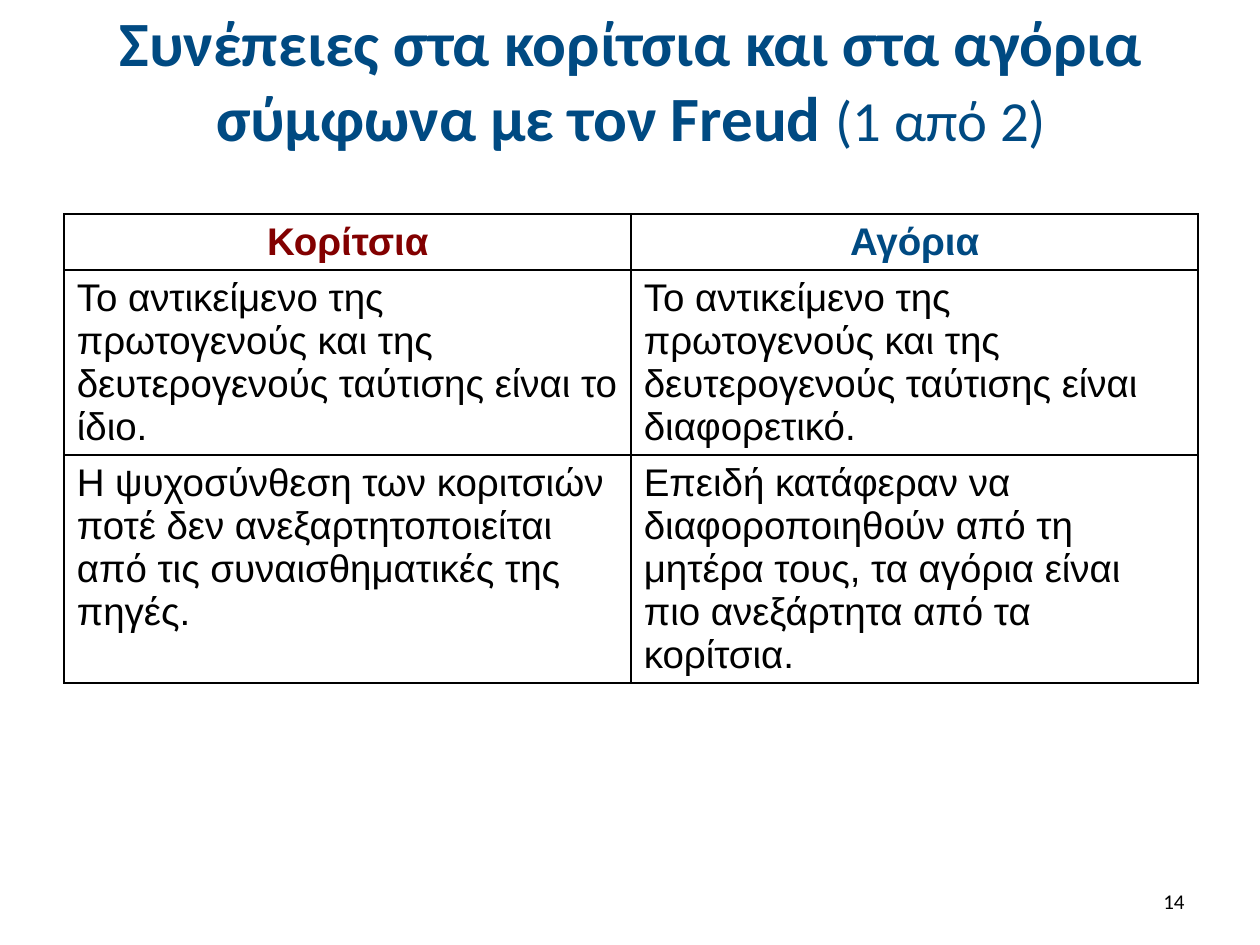
"""Build a slide with a table comparing consequences for girls and boys."""
from dataclasses import dataclass

from lxml import etree
from pptx import Presentation
from pptx import util as u
from pptx.dml.color import RGBColor
from pptx.enum import text
from pptx.oxml import ns

NAVY, MAROON, BLACK = "004A82", "820000", "000000"


@dataclass
class Cell:
    """Wording and look of one table cell."""
    wording: str
    color: str = BLACK
    header: bool = False


@dataclass
class Row:
    """Height in inches and cells of one table row."""
    height: float
    cells: tuple[Cell, Cell]


ROWS = [
    Row(0.44, (Cell("Κορίτσια", MAROON, True), Cell("Αγόρια", NAVY, True))),
    Row(1.47, (
        Cell("Το αντικείμενο της πρωτογενούς και της δευτερογενούς ταύτισης είναι το ίδιο."),
        Cell("Το αντικείμενο της πρωτογενούς και της δευτερογενούς ταύτισης είναι διαφορετικό."),
    )),
    Row(1.81, (
        Cell("Η ψυχοσύνθεση των κοριτσιών ποτέ δεν ανεξαρτητοποιείται από τις "
             "συναισθηματικές της πηγές."),
        Cell("Επειδή κατάφεραν να διαφοροποιηθούν από τη μητέρα τους, τα αγόρια είναι "
             "πιο ανεξάρτητα από τα κορίτσια."),
    )),
]


def style_font(font, name: str, size: float, color: str, bold: bool = False) -> None:
    """Set the typeface, size, colour and weight of a font."""
    font.name, font.size, font.bold = name, u.Pt(size), bold
    font.color.rgb = RGBColor.from_string(color)


def add_borders(cell, color: str, width: float) -> None:
    """Draw a solid line on all four sides of a cell."""
    properties = cell._tc.get_or_add_tcPr()
    for index, side in enumerate(("lnL", "lnR", "lnT", "lnB")):
        line = etree.Element(ns.qn(f"a:{side}"), w=str(u.Pt(width)))
        fill = etree.SubElement(line, ns.qn("a:solidFill"))
        etree.SubElement(fill, ns.qn("a:srgbClr"), val=color)
        properties.insert(index, line)


def fill_title(title) -> None:
    """Place the title and write its bold and light parts."""
    title.left, title.top = u.Inches(0.51), u.Inches(0.13)
    title.width, title.height = u.Inches(9), u.Inches(0.99)
    frame = title.text_frame
    frame.word_wrap = True
    frame.auto_size = text.MSO_AUTO_SIZE.NONE
    frame.vertical_anchor = text.MSO_ANCHOR.MIDDLE
    paragraph = frame.paragraphs[0]
    paragraph.alignment = text.PP_ALIGN.CENTER
    parts = (("Συνέπειες στα κορίτσια και στα αγόρια σύμφωνα με τον Freud ", 36, True),
             ("(1 από 2)", 32.4, False))
    for wording, size, bold in parts:
        run = paragraph.add_run()
        run.text = wording
        style_font(run.font, "Calibri", size, NAVY, bold)


def add_comparison(slide, rows: list[Row]) -> None:
    """Add the two-column comparison table."""
    height = sum(row.height for row in rows)
    table = slide.shapes.add_table(len(rows), 2, u.Inches(0.51), u.Inches(1.7),
                                   u.Inches(9), u.Inches(height)).table
    table.horz_banding = False
    for table_row, row in zip(table.rows, rows):
        table_row.height = u.Inches(row.height)
        for cell, content in zip(table_row.cells, row.cells):
            cell.text_frame.text = content.wording
            cell.fill.background()
            add_borders(cell, BLACK, 1)
            paragraph = cell.text_frame.paragraphs[0]
            paragraph.alignment = (text.PP_ALIGN.CENTER if content.header
                                   else text.PP_ALIGN.LEFT)
            style_font(paragraph.runs[0].font, "Arial", 22, content.color, content.header)


def add_page_number(slide, number: int) -> None:
    """Add the page number at the lower right."""
    shape = slide.shapes.add_textbox(u.Inches(7.17), u.Inches(6.95),
                                     u.Inches(2.33), u.Inches(0.4))
    frame = shape.text_frame
    frame.word_wrap = True
    frame.vertical_anchor = text.MSO_ANCHOR.MIDDLE
    frame.text = str(number)
    paragraph = frame.paragraphs[0]
    paragraph.alignment = text.PP_ALIGN.RIGHT
    style_font(paragraph.runs[0].font, "Calibri", 12, BLACK)


def main() -> None:
    """Build and save the presentation."""
    presentation = Presentation()
    presentation.slide_width, presentation.slide_height = u.Inches(10), u.Inches(7.5)
    slide = presentation.slides.add_slide(presentation.slide_layouts.get_by_name("Title Only"))
    fill_title(slide.shapes.title)
    add_comparison(slide, ROWS)
    add_page_number(slide, 14)
    presentation.save("out.pptx")


if __name__ == "__main__":
    main()
